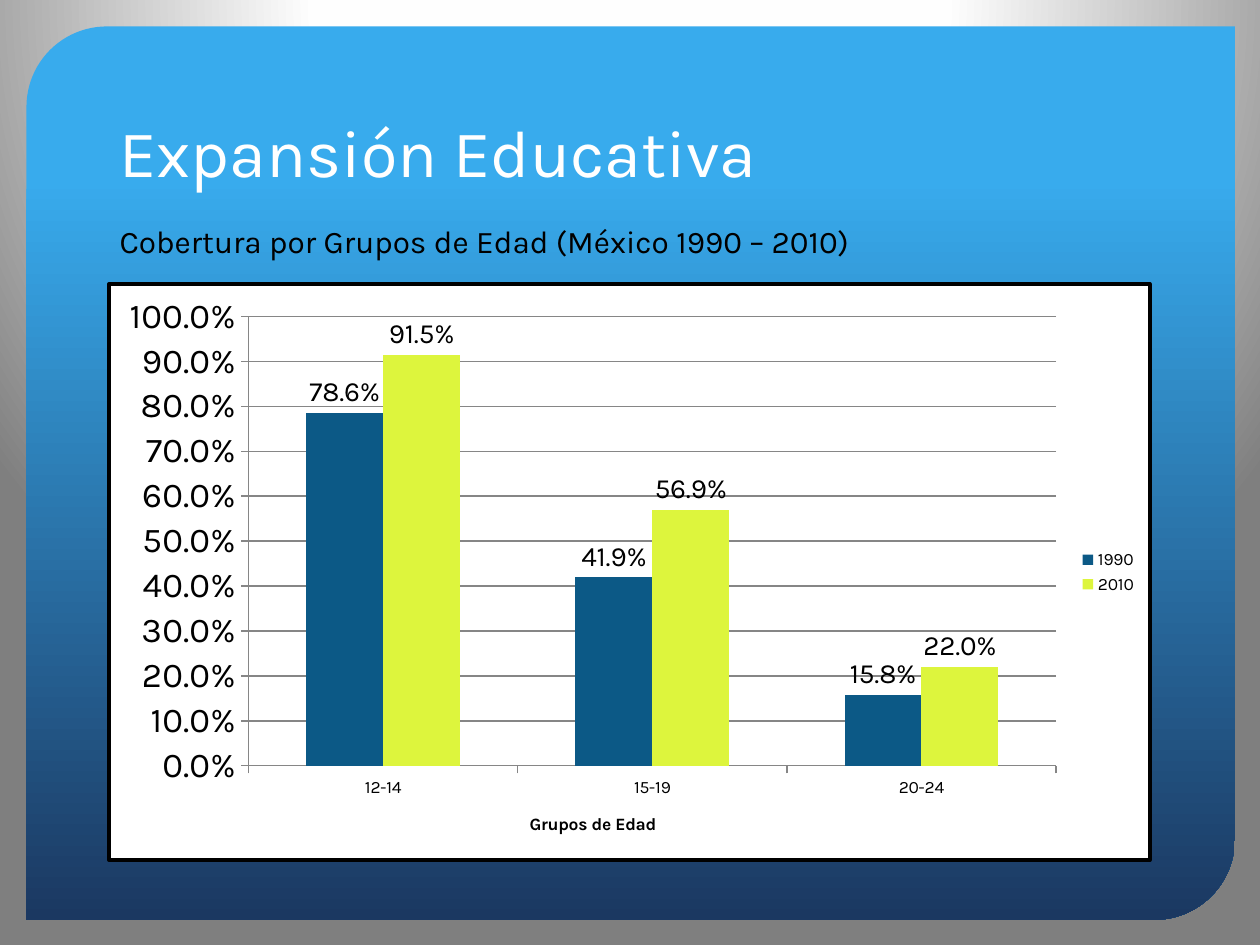
import pptx
import pptx.chart.data
import pptx.dml.color
import pptx.enum.chart
import pptx.enum.shapes
import pptx.enum.text
import pptx.oxml
import pptx.oxml.ns
import pptx.util

Inches, Pt = pptx.util.Inches, pptx.util.Pt
RGBColor = pptx.dml.color.RGBColor
qn, nsdecls = pptx.oxml.ns.qn, pptx.oxml.ns.nsdecls

TITLE = "Expansión Educativa"
SUBTITLE = "Cobertura por Grupos de Edad (México 1990 – 2010)"
AXIS_TITLE = "Grupos de Edad"
AGES = ["12-14", "15-19", "20-24"]
WHITE = RGBColor(0xFF, 0xFF, 0xFF)
BLACK = RGBColor(0, 0, 0)
GRAY = RGBColor(0x86, 0x86, 0x86)
NAVY = RGBColor(0x0C, 0x59, 0x86)
LIME = RGBColor(0xDD, 0xF5, 0x3D)
SKY = RGBColor(0x38, 0xAB, 0xED)
DEEP = RGBColor(0x1B, 0x38, 0x61)
NEAR_WHITE = RGBColor(0xFE, 0xFE, 0xFE)
MID_GRAY = RGBColor(0x7F, 0x7F, 0x7F)
SERIES = [
    ("1990", [0.786, 0.419, 0.158], NAVY),
    ("2010", [0.915, 0.569, 0.22], LIME),
]
BACKDROP = [(0, WHITE), (40, NEAR_WHITE), (100, MID_GRAY)]
PANEL = [(17, SKY), (100, DEEP)]
RADIAL = ('<a:path path="circle"><a:fillToRect l="50000" t="-80000" '
          'r="50000" b="180000"/></a:path>')
DOWNWARD = '<a:lin ang="5400000" scaled="0"/>'
FONT = "Karla"
PERCENT = "0.0%"
LEFT, WIDTH = 0.85, 8.29


def set_gradient(parent, stops, direction):
    gs = "".join(f'<a:gs pos="{pos * 1000}"><a:srgbClr val="{color}"/></a:gs>'
                 for pos, color in stops)
    grad = pptx.oxml.parse_xml(
        f'<a:gradFill {nsdecls("a")} rotWithShape="1">'
        f'<a:gsLst>{gs}</a:gsLst>{direction}</a:gradFill>')
    parent.replace(parent.find(qn("a:solidFill")), grad)


def style(font, size, color=BLACK, bold=False):
    font.name, font.size, font.bold = FONT, Pt(size), bold
    font.color.rgb = color


def add_text(s, text, top, height, size, color, anchor):
    tf = s.shapes.add_textbox(Inches(LEFT), Inches(top), Inches(WIDTH), Inches(height)).text_frame
    tf.word_wrap = True
    tf.vertical_anchor = anchor
    r = tf.paragraphs[0].add_run()
    r.text = text
    style(r.font, size, color)


def add_coverage_chart(s):
    data = pptx.chart.data.CategoryChartData(number_format=PERCENT)
    data.categories = AGES
    for name, values, _ in SERIES:
        data.add_series(name, values)
    chart = s.shapes.add_chart(
        pptx.enum.chart.XL_CHART_TYPE.COLUMN_CLUSTERED,
        Inches(LEFT), Inches(2.24), Inches(WIDTH), Inches(4.6), data).chart
    chart.has_title = False
    style(chart.font, 10)
    frame = pptx.oxml.parse_xml(
        f'<c:spPr {nsdecls("c", "a")}><a:solidFill><a:srgbClr val="{WHITE}"/></a:solidFill>'
        f'<a:ln w="{Pt(2)}"><a:solidFill><a:srgbClr val="{BLACK}"/></a:solidFill></a:ln></c:spPr>')
    chart.element.find(qn("c:txPr")).addprevious(frame)

    chart.has_legend = True
    chart.legend.position = pptx.enum.chart.XL_LEGEND_POSITION.RIGHT
    chart.legend.include_in_layout = False
    style(chart.legend.font, 10)

    ages, share = chart.category_axis, chart.value_axis
    for axis, size in ((ages, 10), (share, 20)):
        axis.major_tick_mark = pptx.enum.chart.XL_TICK_MARK.OUTSIDE
        axis.format.line.color.rgb = GRAY
        style(axis.tick_labels.font, size)
    tf = ages.axis_title.text_frame
    tf.text = AXIS_TITLE
    style(tf.paragraphs[0].runs[0].font, 10, bold=True)
    share.minimum_scale, share.maximum_scale, share.major_unit = 0, 1, 0.1
    share.has_major_gridlines = True
    share.major_gridlines.format.line.color.rgb = GRAY
    share.tick_labels.number_format = PERCENT
    share.tick_labels.number_format_is_linked = False

    plot = chart.plots[0]
    plot.gap_width, plot.overlap = 150, 0
    plot.vary_by_categories = False
    for series, (_, _, color) in zip(plot.series, SERIES):
        series.format.fill.solid()
        series.format.fill.fore_color.rgb = color
        labels = series.data_labels
        labels.show_value = True
        labels.number_format = PERCENT
        labels.number_format_is_linked = False
        labels.position = pptx.enum.chart.XL_LABEL_POSITION.OUTSIDE_END
        style(labels.font, 16)


def main():
    prs = pptx.Presentation()
    prs.slide_width, prs.slide_height = Inches(10), Inches(7.5)
    s = prs.slides.add_slide(prs.slide_layouts[6])
    s.background.fill.solid()
    set_gradient(next(s.element.iter(qn("p:bgPr"))), BACKDROP, RADIAL)

    sp = s.shapes.add_shape(pptx.enum.shapes.MSO_SHAPE.ROUND_2_DIAG_RECTANGLE,
                            Inches(0.21), Inches(0.21), Inches(9.59), Inches(7.09))
    sp.adjustments[0], sp.adjustments[1] = 0.09, 0
    sp.shadow.inherit = False
    sp.line.fill.background()
    sp.fill.solid()
    set_gradient(sp.element.spPr, PANEL, DOWNWARD)

    anchors = pptx.enum.text.MSO_ANCHOR
    add_text(s, TITLE, 0.42, 1.14, 38, WHITE, anchors.BOTTOM)
    add_coverage_chart(s)
    add_text(s, SUBTITLE, 1.71, 0.71, 18, BLACK, anchors.TOP)
    prs.save("out.pptx")


if __name__ == "__main__":
    main()
